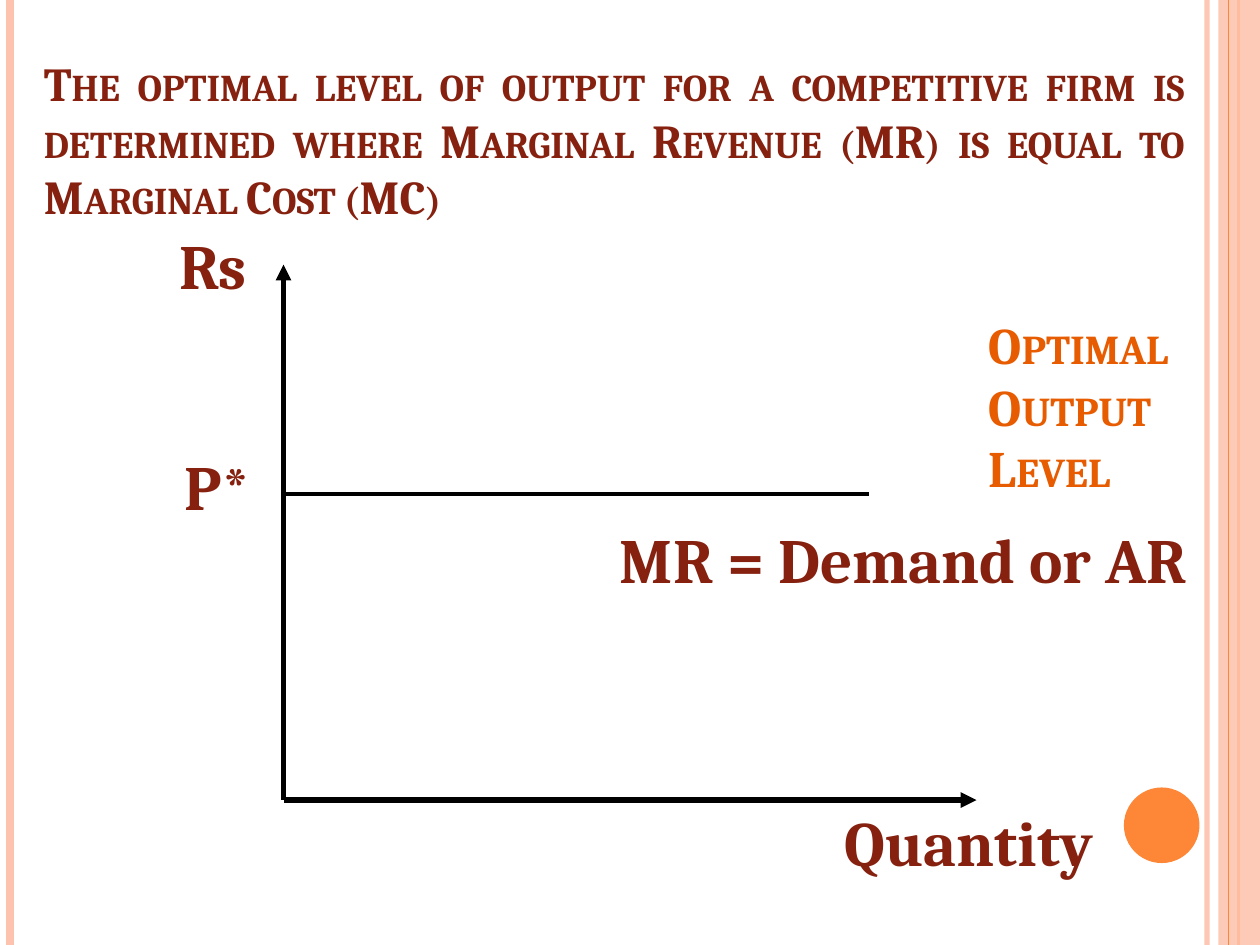
from lxml import etree
from pptx import Presentation
from pptx.dml.color import RGBColor
from pptx.enum import shapes as sh, text as tx
from pptx.oxml.ns import qn
from pptx.util import Inches, Pt

BLACK = RGBColor(0x00, 0x00, 0x00)
PEACH = RGBColor(0xFE, 0xC3, 0xAE)
ORANGE = RGBColor(0xFE, 0x86, 0x37)
RUST = RGBColor(0xE7, 0x5C, 0x01)
MAROON = RGBColor(0x86, 0x21, 0x10)
FONT = "Cambria"


def fade(fill, pct):
    """Set the opacity of a solid fill held by the given element."""
    color = fill.find(".//" + qn("a:srgbClr"))
    etree.SubElement(color, qn("a:alpha")).set("val", str(pct * 1000))


def add_line(slide, start, end, color, width, head=None, alpha=None):
    """Draw a straight line; head is 'headEnd' or 'tailEnd'."""
    points = [Inches(v) for v in (*start, *end)]
    line = slide.shapes.add_connector(sh.MSO_CONNECTOR.STRAIGHT, *points)
    line.line.color.rgb = color
    line.line.width = Pt(width)
    props = line._element.spPr
    if alpha:
        fade(props.find(qn("a:ln")), alpha)
    if head:
        arrow = etree.SubElement(props.find(qn("a:ln")), qn("a:" + head))
        arrow.set("type", "triangle")
    etree.SubElement(props, qn("a:effectLst"))


def add_solid(slide, kind, box, color, alpha=None):
    """Draw a filled shape without outline."""
    shape = slide.shapes.add_shape(kind, *[Inches(v) for v in box])
    shape.shadow.inherit = False
    shape.fill.solid()
    shape.fill.fore_color.rgb = color
    shape.line.fill.background()
    if alpha:
        fade(shape._element.spPr.find(qn("a:solidFill")), alpha)


def add_text(slide, box, words, size, color=MAROON, align=tx.PP_ALIGN.CENTER,
             anchor=tx.MSO_ANCHOR.TOP, wrap=False, small=False):
    """Place one bold paragraph, in small caps if asked."""
    frame = slide.shapes.add_textbox(*[Inches(v) for v in box]).text_frame
    frame.word_wrap = wrap
    frame.vertical_anchor = anchor
    para = frame.paragraphs[0]
    para.alignment = align
    run = para.add_run()
    run.text = words
    font = run.font if small else para.font
    font.name, font.size, font.bold = FONT, Pt(size), True
    font.color.rgb = color
    if small:
        run._r.get_or_add_rPr().set("cap", "small")


def add_frame(slide, box):
    """Side stripes and the corner disc."""
    left, top, width, height = box
    right, foot = left + width, top + height

    def stripe(x, color, size, alpha=None):
        add_line(slide, (x, top), (x, foot), color, size, alpha=alpha)

    stripe(right - 0.42, PEACH, 3, 93)
    stripe(left + 0.08, PEACH, 4.5)
    stripe(right - 0.17, ORANGE, 1.5)
    add_solid(slide, sh.MSO_SHAPE.RECTANGLE,
              (right - 0.33, top, 0.33, height), PEACH, 87)
    stripe(right - 0.25, ORANGE, 0.75)
    add_solid(slide, sh.MSO_SHAPE.OVAL,
              (right - 1.08, foot - 1.25, 0.6, 0.6), ORANGE)


def add_graph(slide, box):
    """Price and quantity axes with the flat demand line."""
    left, top, width, height = box
    base = top + height
    price = top + 1.82

    # Axes and demand line
    add_line(slide, (left, top), (left, base), BLACK, 3, "headEnd")
    add_line(slide, (left, base), (left + width, base), BLACK, 3, "tailEnd")
    add_line(slide, (left, price), (left + 4.65, price), BLACK, 2.5)

    # Labels: offset from the graph corner, width, wording
    labels = [
        (-0.94, -0.35, 0.76, "Rs"),
        (2.5, 1.98, 4.84, "MR = Demand or AR"),
        (4.33, 4.23, 2.22, "Quantity"),
        (-0.89, 1.4, 0.74, "P*"),
    ]
    for x, y, wide, words in labels:
        add_text(slide, (left + x, top + y, wide, 0.71), words, 36)


def add_heads(slide, title, note):
    """Title and side note, both resting on the foot of their box."""
    foot = tx.MSO_ANCHOR.BOTTOM
    add_text(slide, title,
             "The optimal level of output for a competitive firm is "
             "determined where Marginal Revenue (MR) is equal to "
             "Marginal Cost (MC)",
             27, MAROON, tx.PP_ALIGN.JUSTIFY, foot, True, True)
    add_text(slide, note, "Optimal Output Level",
             29.2, RUST, tx.PP_ALIGN.LEFT, foot, True, True)


def main():
    deck = Presentation()
    deck.slide_width, deck.slide_height = Inches(10), Inches(7.5)
    slide = deck.slides.add_slide(deck.slide_layouts[6])
    add_frame(slide, (0, 0, 10, 7.5))
    add_graph(slide, (2.25, 2.1, 5.5, 4.25))
    add_heads(slide, (0.25, 0, 9.25, 1.83), (7.75, 1.33, 2, 2.67))
    deck.save("out.pptx")


if __name__ == "__main__":
    main()
